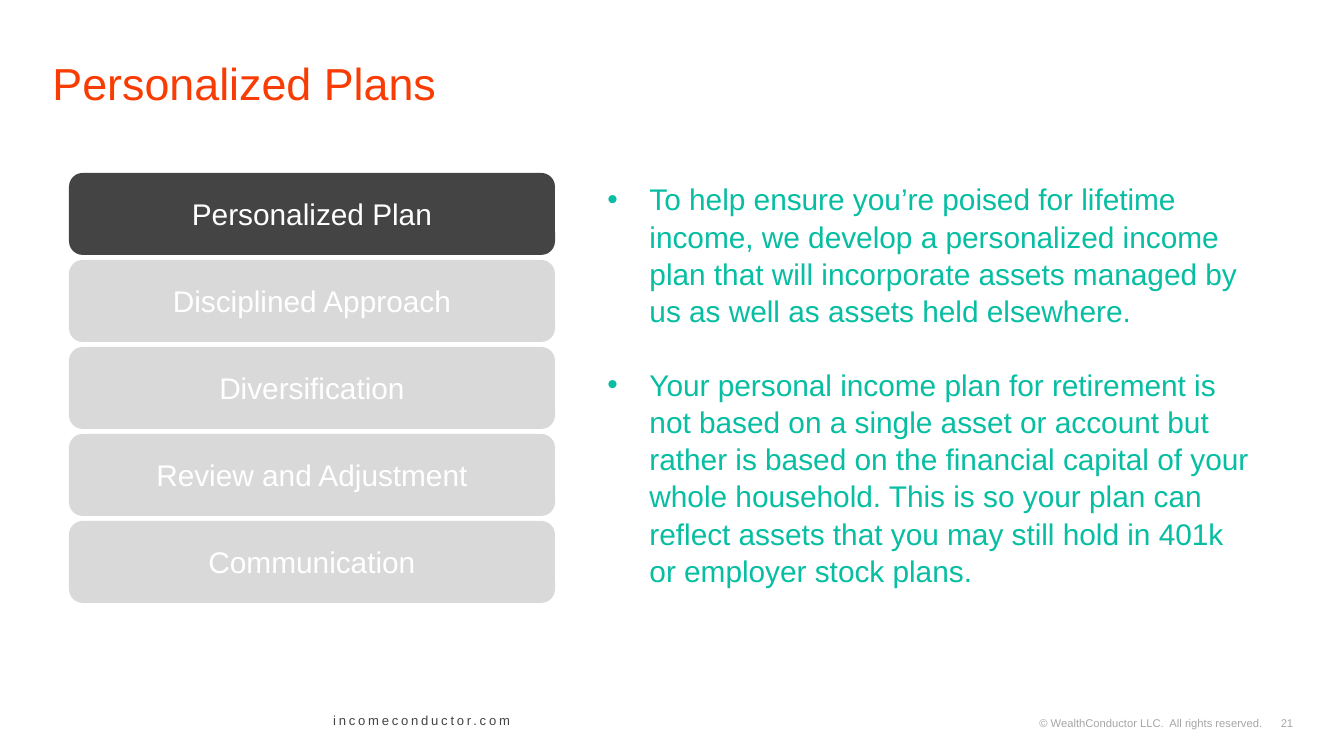
from pptx import Presentation
from pptx.dml.color import RGBColor
from pptx.enum.shapes import MSO_SHAPE
from pptx.enum.text import MSO_ANCHOR, MSO_AUTO_SIZE, PP_ALIGN
from pptx.util import Emu, Pt
from lxml.etree import SubElement
from pptx.oxml.ns import qn

WHITE = RGBColor(0xFF, 0xFF, 0xFF)
DARK = RGBColor(0x43, 0x44, 0x43)
PALE = RGBColor(0xD9, 0xD9, 0xD9)
GREY = RGBColor(0xA6, 0xA6, 0xA6)
RED = RGBColor(0xF8, 0x3C, 0x04)
TEAL = RGBColor(0x07, 0xBE, 0xA2)


def px(n):
    return Emu(round(n * 914400 / 134.4))


class Deck:
    font = "Arial"

    def __init__(self, wide, high):
        self.prs = Presentation()
        self.prs.slide_width, self.prs.slide_height = px(wide), px(high)
        self.slide = self.prs.slides.add_slide(self.prs.slide_layouts[1])

    def place(self, shape, box):
        shape.left, shape.top, shape.width, shape.height = map(px, box)

    def run(self, para, text, size, color):
        run = para.add_run()
        run.text = text
        run.font.name = self.font
        run.font.size = Pt(size)
        run.font.color.rgb = color
        return run

    def title(self, text, box):
        shape = self.slide.shapes.title
        self.place(shape, box)
        frame = shape.text_frame
        frame.auto_size = MSO_AUTO_SIZE.NONE
        frame.vertical_anchor = MSO_ANCHOR.MIDDLE
        para = frame.paragraphs[0]
        para.alignment = PP_ALIGN.LEFT
        self.run(para, text, 24, RED)

    def list(self, items, box):
        shape = self.slide.placeholders[1]
        self.place(shape, box)
        frame = shape.text_frame
        frame.auto_size = MSO_AUTO_SIZE.NONE
        for i, text in enumerate(items):
            para = frame.add_paragraph() if i else frame.paragraphs[0]
            para.line_spacing = 1.04
            para.space_before = Pt(19.4 if i else 0)
            props = para._p.get_or_add_pPr()
            props.set("marL", str(px(42)))
            props.set("indent", str(px(-42)))
            SubElement(props, qn("a:buFont"), typeface=self.font)
            SubElement(props, qn("a:buChar"), char="•")
            self.run(para, text, 16, TEAL)

    def tile(self, text, box, fill):
        shape = self.slide.shapes.add_shape(
            MSO_SHAPE.ROUNDED_RECTANGLE, *map(px, box))
        shape.shadow.inherit = False
        shape.fill.solid()
        shape.fill.fore_color.rgb = fill
        shape.line.fill.background()
        frame = shape.text_frame
        frame.vertical_anchor = MSO_ANCHOR.MIDDLE
        para = frame.paragraphs[0]
        para.alignment = PP_ALIGN.CENTER
        self.run(para, text, 16, WHITE)

    def note(self, text, box, size, color, wrap=True, gap=0, tabs=()):
        shape = self.slide.shapes.add_textbox(*map(px, box))
        frame = shape.text_frame
        frame.word_wrap = wrap
        para = frame.paragraphs[0]
        if tabs:
            stops = SubElement(para._p.get_or_add_pPr(), qn("a:tabLst"))
            for stop in tabs:
                SubElement(stops, qn("a:tab"), pos=str(px(stop)), algn="r")
        run = self.run(para, text, size, color)
        if gap:
            run.font._element.set("spc", str(gap))


def main():
    deck = Deck(1344, 756)
    deck.note("\t© WealthConductor LLC.  All rights reserved.\t21",
              (637, 710, 672, 27), 6, GREY, tabs=(612, 643))
    deck.note("incomeconductor.com", (320, 706, 210, 29), 7, DARK,
              wrap=False, gap=150)
    deck.title("Personalized Plans", (39, 38, 1258, 90))
    names = ("Personalized Plan", "Disciplined Approach", "Diversification",
             "Review and Adjustment", "Communication")
    for i, name in enumerate(names):
        deck.tile(name, (69, 173 + 87 * i, 486, 82), PALE if i else DARK)
    deck.list((
        "To help ensure you’re poised for lifetime income, we develop a "
        "personalized income plan that will incorporate assets managed by us "
        "as well as assets held elsewhere.",
        "Your personal income plan for retirement is not based on a single "
        "asset or account but rather is based on the financial capital of "
        "your whole household. This is so your plan can reflect assets that "
        "you may still hold in 401k or employer stock plans.",
    ), (594, 173, 672, 411))
    deck.prs.save("out.pptx")


if __name__ == "__main__":
    main()
